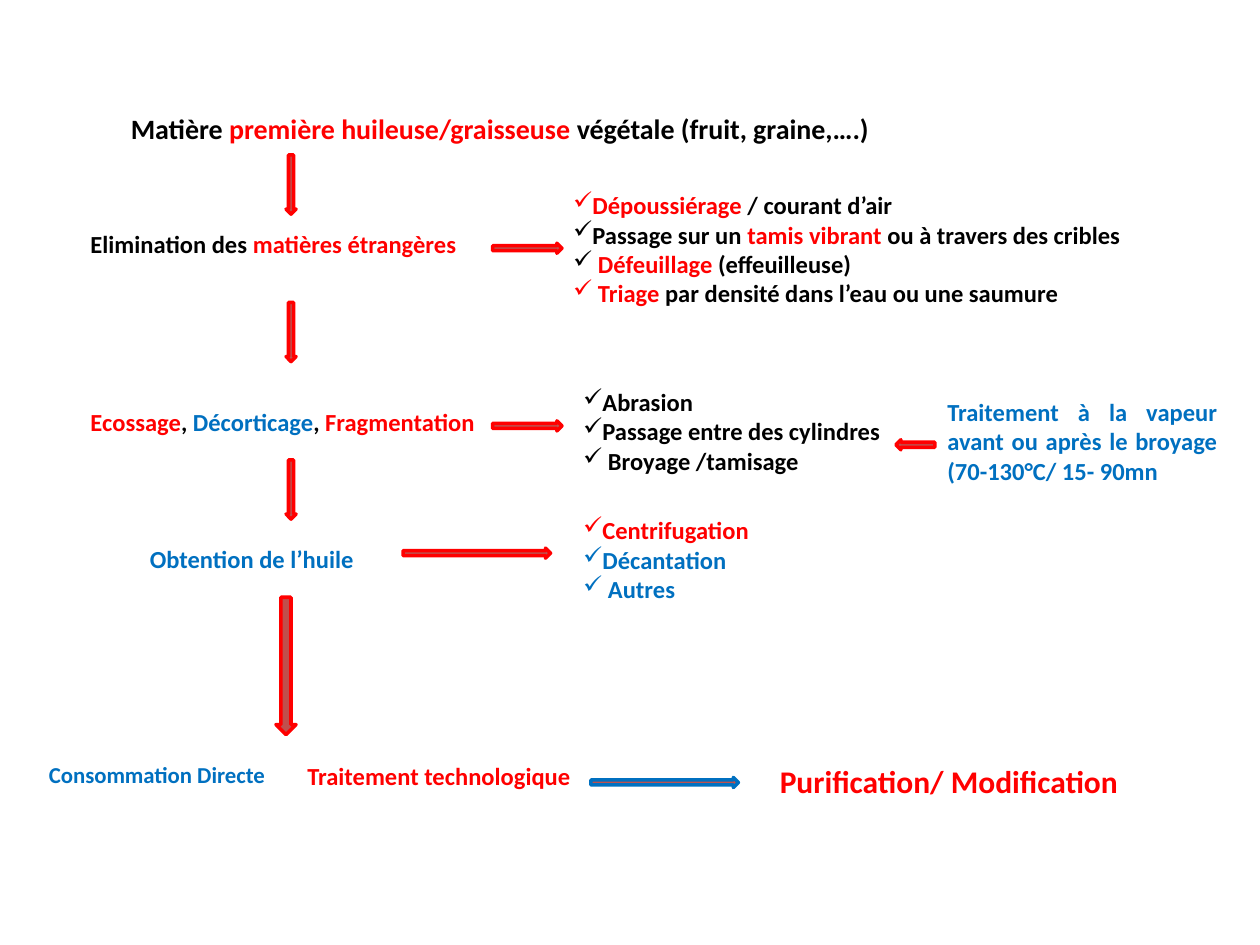
import pptx
import pptx.util
import pptx.dml.color
import pptx.enum.shapes
import pptx.enum.text
import pptx.oxml.ns
import lxml.etree

Inches = pptx.util.Inches
Pt = pptx.util.Pt
RGBColor = pptx.dml.color.RGBColor
Shape = pptx.enum.shapes.MSO_SHAPE
Align = pptx.enum.text.PP_ALIGN

BLACK = RGBColor(0x00, 0x00, 0x00)
RED = RGBColor(0xFF, 0x00, 0x00)
BLUE = RGBColor(0x00, 0x70, 0xC0)
BRICK = RGBColor(0xC0, 0x50, 0x4D)
FONT = "Calibri"
ARROW_THICKNESS = Inches(0.08)


def add_check_bullet(para):
    properties = para._p.get_or_add_pPr()
    properties.set("marL", "0")
    properties.set("indent", "0")
    bullet = lxml.etree.SubElement(properties, pptx.oxml.ns.qn("a:buChar"))
    bullet.set("char", "✓")


def add_text(page, box, paragraphs, size=14, align=Align.LEFT, checked=False, wrap=True):
    frame = page.shapes.add_textbox(*box).text_frame
    frame.word_wrap = wrap
    frame.auto_size = pptx.enum.text.MSO_AUTO_SIZE.SHAPE_TO_FIT_TEXT
    for index, spans in enumerate(paragraphs):
        para = frame.add_paragraph() if index else frame.paragraphs[0]
        if checked:
            add_check_bullet(para)
        para.alignment = align
        for text, color in spans:
            span = para.add_run()
            span.text = text
            span.font.name = FONT
            span.font.size = Pt(size)
            span.font.bold = True
            span.font.color.rgb = color


def add_arrow(page, kind, box, outline=RED):
    arrow = page.shapes.add_shape(kind, *box)
    arrow.shadow.inherit = False
    arrow.fill.solid()
    arrow.fill.fore_color.rgb = BRICK
    arrow.line.color.rgb = outline
    arrow.line.width = Pt(2)


def draw_steps(page, left, top, width, height):
    steps = [
        (0.32, 0, 6.17, 0.37, 16, [("Matière ", BLACK), ("première huileuse/graisseuse", RED),
                                   (" végétale (fruit, graine,….)", BLACK)]),
        (0, 0.93, 3.2, 0.34, 14, [("Elimination des ", BLACK), ("matières étrangères", RED)]),
        (0, 2.34, width.inches, 0.34, 14, [("Ecossage", RED), (", ", BLACK), ("Décorticage", BLUE),
                                           (", ", BLACK), ("Fragmentation", RED)]),
        (0.47, 3.43, 1.95, 0.34, 14, [("Obtention de l’huile", BLUE)]),
    ]
    for x, y, step_width, step_height, size, spans in steps:
        box = (left + Inches(x), top + Inches(y), Inches(step_width), Inches(step_height))
        add_text(page, box, [spans], size=size)

    for y in (0.39, 1.56, 2.81):
        box = (left + Inches(1.65), top + Inches(y), ARROW_THICKNESS, Inches(0.47))
        add_arrow(page, Shape.DOWN_ARROW, box)
    last_length = Inches(1.09)
    add_arrow(page, Shape.DOWN_ARROW,
              (left + Inches(1.57), top + height - last_length, 2 * ARROW_THICKNESS, last_length))


def draw_operations(page, left, top, width, height):
    cleaning = [
        [("Dépoussiérage", RED), (" / courant d’air", BLACK)],
        [("Passage sur un ", BLACK), ("tamis vibrant ", RED), ("ou à travers des cribles", BLACK)],
        [(" ", BLACK), ("Défeuillage", RED), (" (effeuilleuse)", BLACK)],
        [(" Triage ", RED), ("par densité dans l’eau ou une saumure", BLACK)],
    ]
    grinding = [[(text, BLACK)] for text in
                ("Abrasion", "Passage entre des cylindres", " Broyage /tamisage")]
    extraction = [[("Centrifugation", RED)], [("Décantation", BLUE)], [(" Autres", BLUE)]]
    list_left = left + Inches(0.08)
    list_size = (Inches(2.66), Inches(0.81))

    add_text(page, (left, top, width, Inches(1.04)), cleaning, checked=True)
    add_text(page, (list_left, top + Inches(1.56), *list_size), grinding, checked=True)
    add_text(page, (list_left, top + height - list_size[1], *list_size), extraction, checked=True)

    for x, y, length in ((-0.54, 0.47, 0.55), (-0.54, 1.88, 0.55), (-1.25, 2.89, 1.17)):
        box = (left + Inches(x), top + Inches(y), Inches(length), ARROW_THICKNESS)
        add_arrow(page, Shape.RIGHT_ARROW, box)


def draw_steam_treatment(page, left, top, width, height):
    length = Inches(0.31)
    note = "Traitement à la vapeur avant ou après le broyage (70-130°C/ 15- 90mn"
    add_text(page, (left + length, top, width - length, height), [[(note, BLUE)]],
             align=Align.JUSTIFY)
    add_arrow(page, Shape.LEFT_ARROW, (left, top + Inches(0.39), length, ARROW_THICKNESS))


def draw_outcomes(page, left, top, width, height):
    add_text(page, (left, top, Inches(2.03), Inches(0.32)),
             [[("Consommation Directe", BLUE)]], size=13, align=Align.CENTER)
    add_text(page, (left + Inches(2.11), top, Inches(2.42), Inches(0.34)),
             [[("Traitement technologique", RED)]])
    result_width = Inches(2.92)
    add_text(page, (left + width - result_width, top + Inches(0.01), result_width, height),
             [[("Purification/ Modification", RED)]], size=18, wrap=False)
    add_arrow(page, Shape.RIGHT_ARROW,
              (left + Inches(4.46), top + Inches(0.18), Inches(1.17), ARROW_THICKNESS),
              outline=BLUE)


def main():
    deck = pptx.Presentation()
    deck.slide_width = Inches(10)
    deck.slide_height = Inches(7.5)
    page = deck.slides.add_slide(deck.slide_layouts[6])
    draw_steps(page, Inches(0.62), Inches(0.84), Inches(3.36), Inches(4.99))
    draw_operations(page, Inches(4.45), Inches(1.46), Inches(4.69), Inches(3.39))
    draw_steam_treatment(page, Inches(7.11), Inches(3.1), Inches(2.65), Inches(0.81))
    draw_outcomes(page, Inches(0.23), Inches(5.99), Inches(8.78), Inches(0.4))
    deck.save("out.pptx")


if __name__ == "__main__":
    main()
